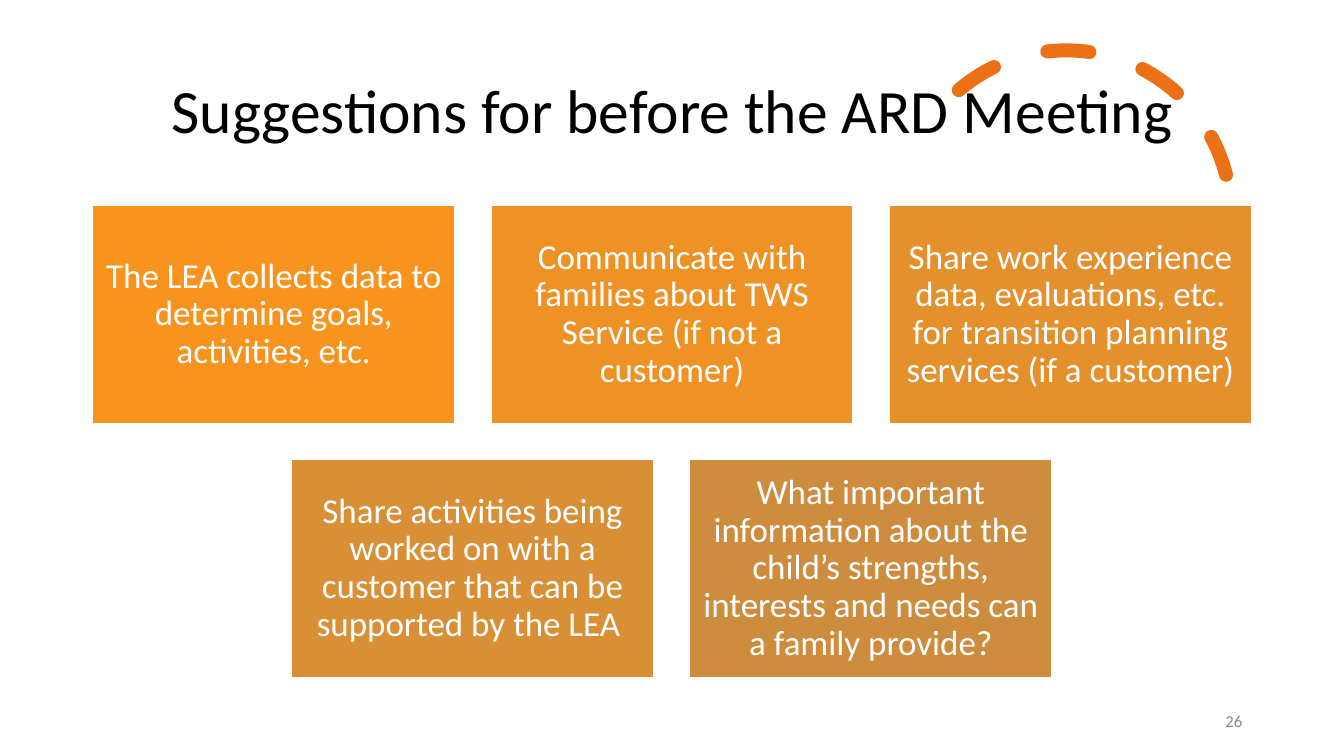
"""Build the slide of suggestions for before the ARD meeting."""
from lxml.etree import SubElement
from pptx import Presentation
from pptx.dml.color import RGBColor
from pptx.enum.dml import MSO_LINE
from pptx.enum.shapes import MSO_SHAPE
from pptx.enum.text import MSO_ANCHOR, MSO_AUTO_SIZE, PP_ALIGN
from pptx.oxml.ns import qn
from pptx.util import Emu, Pt

CARDS = [
    ("The LEA collects data to determine goals, activities, etc.", "F8931D"),
    ("Communicate with families about TWS Service (if not a customer)", "EE9225"),
    ("Share work experience data, evaluations, etc. for transition planning "
     "services (if a customer)", "E3902D"),
    ("Share activities being worked on with a customer that can be "
     "supported by the LEA ", "D98F35"),
    ("What important information about the child’s strengths, interests "
     "and needs can a family provide?", "CE8D3E"),
]
WIDE, HIGH, STEP, DROP = 359, 216, 395, 252
LEFT, TOP, COLS = 92, 204, 3


def px(*vals):
    """Turn lengths in px, 100 to the inch, into EMU."""
    return [Emu(val * 9144) for val in vals]


def color(code):
    """Turn a hex string into a colour."""
    return RGBColor.from_string(code)


class Deck:
    """Hold the style and the current slide."""

    face = "Calibri"

    def __init__(self):
        """Start a deck with one title-only slide."""
        self.prs = Presentation()
        self.prs.slide_width, self.prs.slide_height = px(1333, 750)
        self.slide = self.prs.slides.add_slide(self.prs.slide_layouts[5])

    def letter(self, shape, text, size, code, align, space=1.0, inset=None):
        """Set and format the text of a shape."""
        frame = shape.text_frame
        frame.text = text
        frame.word_wrap = True
        frame.auto_size = MSO_AUTO_SIZE.NONE
        frame.vertical_anchor = MSO_ANCHOR.MIDDLE
        if inset is not None:
            pad = px(inset)[0]
            frame.margin_left = frame.margin_right = pad
            frame.margin_top = frame.margin_bottom = pad
        para = frame.paragraphs[0]
        para.alignment = align
        para.line_spacing = space
        font = para.runs[0].font
        font.name, font.size = self.face, Pt(size)
        font.color.rgb = color(code)

    def title(self, text, *box):
        """Place and fill the title."""
        shape = self.slide.shapes.title
        shape.left, shape.top, shape.width, shape.height = px(*box)
        self.letter(shape, text, 44, "000000", PP_ALIGN.CENTER, 0.9)

    def arc(self, code, weight, turn, start, *box):
        """Draw a dashed arc with round caps behind the title."""
        shape = self.slide.shapes.add_shape(MSO_SHAPE.ARC, *px(*box))
        shape.shadow.inherit = False
        shape.adjustments[0], shape.adjustments[1] = start, 0
        shape.rotation = turn
        shape.fill.background()
        line = shape.line
        line.color.rgb = color(code)
        line.width = Pt(weight)
        line.dash_style = MSO_LINE.DASH
        tag = shape.element.spPr.find(qn("a:ln"))
        tag.set("cap", "rnd")
        SubElement(tag, qn("a:round"))
        self.slide.shapes.title.element.addprevious(shape.element)

    def card(self, text, code, *box):
        """Draw a filled card with centred text."""
        shape = self.slide.shapes.add_shape(MSO_SHAPE.RECTANGLE, *px(*box))
        shape.shadow.inherit = False
        shape.fill.solid()
        shape.fill.fore_color.rgb = color(code)
        shape.line.color.rgb = color("FFFFFF")
        shape.line.width = Pt(1)
        self.letter(shape, text, 25, "FFFFFF", PP_ALIGN.CENTER, 0.9, 10)

    def label(self, text, *box):
        """Add the page number."""
        shape = self.slide.shapes.add_textbox(*px(*box))
        self.letter(shape, text, 12, "8C8C8C", PP_ALIGN.RIGHT)


def main():
    """Build and save the slide."""
    deck = Deck()
    deck.title("Suggestions for before the ARD Meeting", 92, 40, 1150, 145)
    deck.arc("EC7016", 10, 345.8, 146.13, 894, 50, 327, 327)
    deck.label("26", 942, 695, 300, 40)
    for num, (text, code) in enumerate(CARDS):
        row, col = divmod(num, COLS)
        count = min(COLS, len(CARDS) - row * COLS)
        left = LEFT + (COLS - count) * STEP // 2 + col * STEP
        deck.card(text, code, left, TOP + row * DROP, WIDE, HIGH)
    deck.prs.save("out.pptx")


if __name__ == "__main__":
    main()
